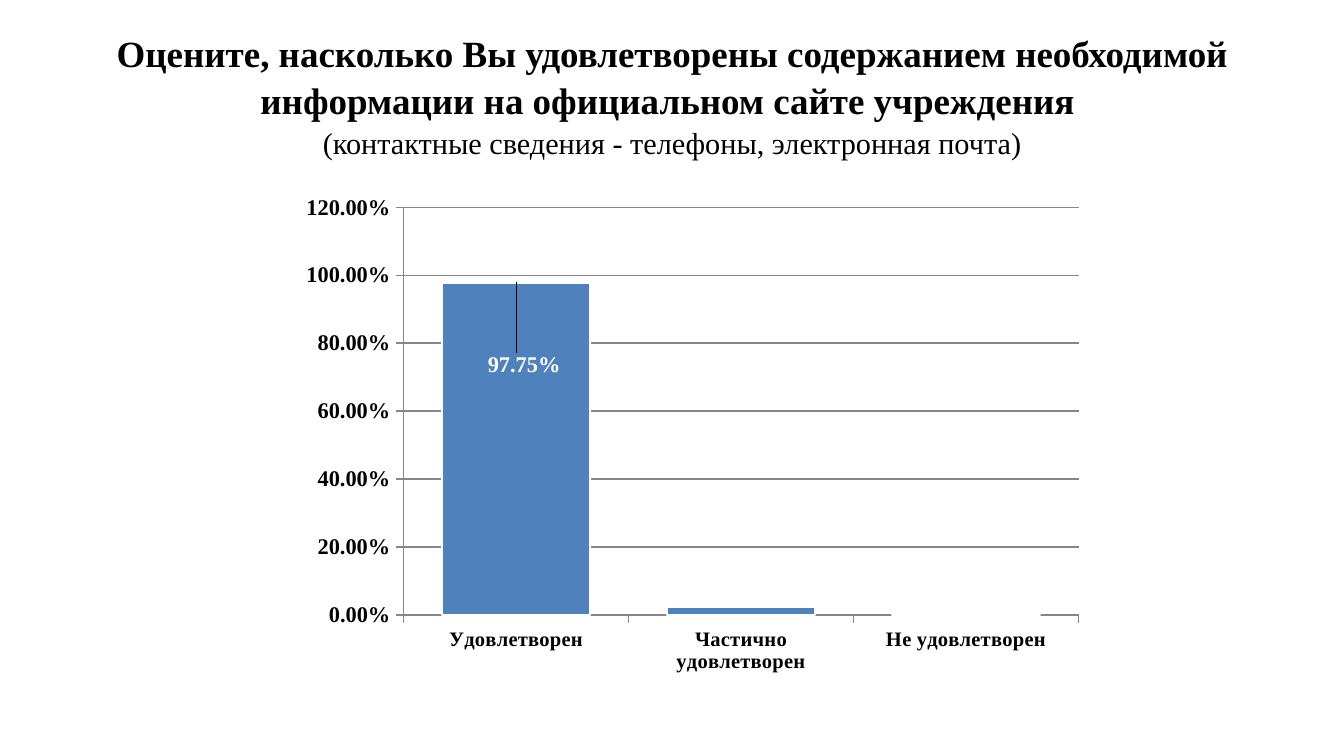
import pptx
import pptx.chart.data
import pptx.dml.color
import pptx.enum.chart
import pptx.enum.text
import pptx.oxml
import pptx.oxml.ns
import pptx.util
from dataclasses import dataclass

EMU_PER_PX = 9525


@dataclass(frozen=True)
class Theme:
    font: str = "Times New Roman"
    text: str = "000000"
    bar: str = "4F81BD"
    light: str = "FFFFFF"
    grid: str = "868686"
    question_size: float = 19.8
    detail_size: float = 16.2
    base_size: float = 10
    category_size: float = 11
    value_size: float = 12
    hairline: float = 0.75


THEME = Theme()
QUESTION = ("Оцените, насколько Вы удовлетворены содержанием необходимой "
            "информации на официальном сайте учреждения ")
DETAIL = "(контактные сведения - телефоны, электронная почта)"
ANSWERS = {
    "Удовлетворен": 0.9775,
    "Частично удовлетворен": 0.0214,
    "Не удовлетворен": 0.0012,
}


def px(length):
    return pptx.util.Emu(length * EMU_PER_PX)


def rgb(color):
    return pptx.dml.color.RGBColor.from_string(color)


def apply(target, values):
    for attribute, value in values.items():
        setattr(target, attribute, value)


def format_font(font, size, color=THEME.text, bold=False):
    apply(font, dict(name=THEME.font, size=pptx.util.Pt(size), bold=bold))
    font.color.rgb = rgb(color)


def format_line(line, color):
    line.color.rgb = rgb(color)
    line.width = pptx.util.Pt(THEME.hairline)


def manual_layout(**settings):
    """Return a c:layout element; settings keep the schema order."""
    items = "".join(f'<c:{tag} val="{value}"/>' for tag, value in settings.items())
    return pptx.oxml.parse_xml(
        f'<c:layout {pptx.oxml.ns.nsdecls("c")}>'
        f"<c:manualLayout>{items}</c:manualLayout></c:layout>")


def write_title(title):
    apply(title, dict(left=px(48), top=px(22), width=px(864), height=px(90)))
    frame = title.text_frame
    apply(frame, dict(word_wrap=True,
                      auto_size=pptx.enum.text.MSO_AUTO_SIZE.NONE,
                      vertical_anchor=pptx.enum.text.MSO_ANCHOR.MIDDLE))
    paragraph = frame.paragraphs[0]
    apply(paragraph, dict(alignment=pptx.enum.text.PP_ALIGN.CENTER,
                          line_spacing=1.06))
    question = paragraph.add_run()
    question.text = QUESTION
    format_font(question.font, THEME.question_size, bold=True)
    paragraph.add_line_break()
    detail = paragraph.add_run()
    detail.text = DETAIL
    format_font(detail.font, THEME.detail_size)


def format_axis(axis, size):
    apply(axis, dict(major_tick_mark=pptx.enum.chart.XL_TICK_MARK.OUTSIDE,
                     minor_tick_mark=pptx.enum.chart.XL_TICK_MARK.NONE))
    format_font(axis.tick_labels.font, size, bold=True)
    format_line(axis.format.line, THEME.grid)


def label_leading_answer(series):
    series.data_labels.show_value = False
    label = series.points[0].data_label
    format_font(label.font, THEME.value_size, THEME.light, bold=True)
    label.position = pptx.enum.chart.XL_LABEL_POSITION.INSIDE_END
    answer_label = series.data_labels._element.find(pptx.oxml.ns.qn("c:dLbl"))
    answer_label.insert(1, manual_layout(x=0.01, y=0.13))


def add_answer_chart(slide):
    answers = pptx.chart.data.CategoryChartData(number_format="0.00%")
    answers.categories = list(ANSWERS)
    answers.add_series("Series 1", list(ANSWERS.values()))
    chart = slide.shapes.add_chart(
        pptx.enum.chart.XL_CHART_TYPE.COLUMN_CLUSTERED,
        px(208), px(134), px(574), px(355), answers).chart
    apply(chart, dict(has_title=False, has_legend=False))
    format_font(chart.font, THEME.base_size)

    format_axis(chart.category_axis, THEME.category_size)
    scale = chart.value_axis
    format_axis(scale, THEME.value_size)
    apply(scale, dict(minimum_scale=0, maximum_scale=1.2, major_unit=0.2,
                      has_major_gridlines=True))
    format_line(scale.major_gridlines.format.line, THEME.grid)
    apply(scale.tick_labels, dict(number_format="0.00%",
                                  number_format_is_linked=False))

    plot = chart.plots[0]
    apply(plot, dict(gap_width=52, vary_by_categories=False))
    bars = plot.series[0]
    bars.format.fill.solid()
    bars.format.fill.fore_color.rgb = rgb(THEME.bar)
    format_line(bars.format.line, THEME.light)
    label_leading_answer(bars)

    plot_area = chart._chartSpace.chart.plotArea
    for automatic in plot_area.findall(pptx.oxml.ns.qn("c:layout")):
        plot_area.remove(automatic)
    plot_area.insert(0, manual_layout(
        layoutTarget="inner", xMode="edge", yMode="edge",
        x=0.14, y=0.04, w=0.84, h=0.82))


def main():
    presentation = pptx.Presentation()
    apply(presentation, dict(slide_width=px(960), slide_height=px(540)))
    title_only = presentation.slide_layouts[5]
    slide = presentation.slides.add_slide(title_only)
    write_title(slide.shapes.title)
    add_answer_chart(slide)
    presentation.save("out.pptx")


if __name__ == "__main__":
    main()
